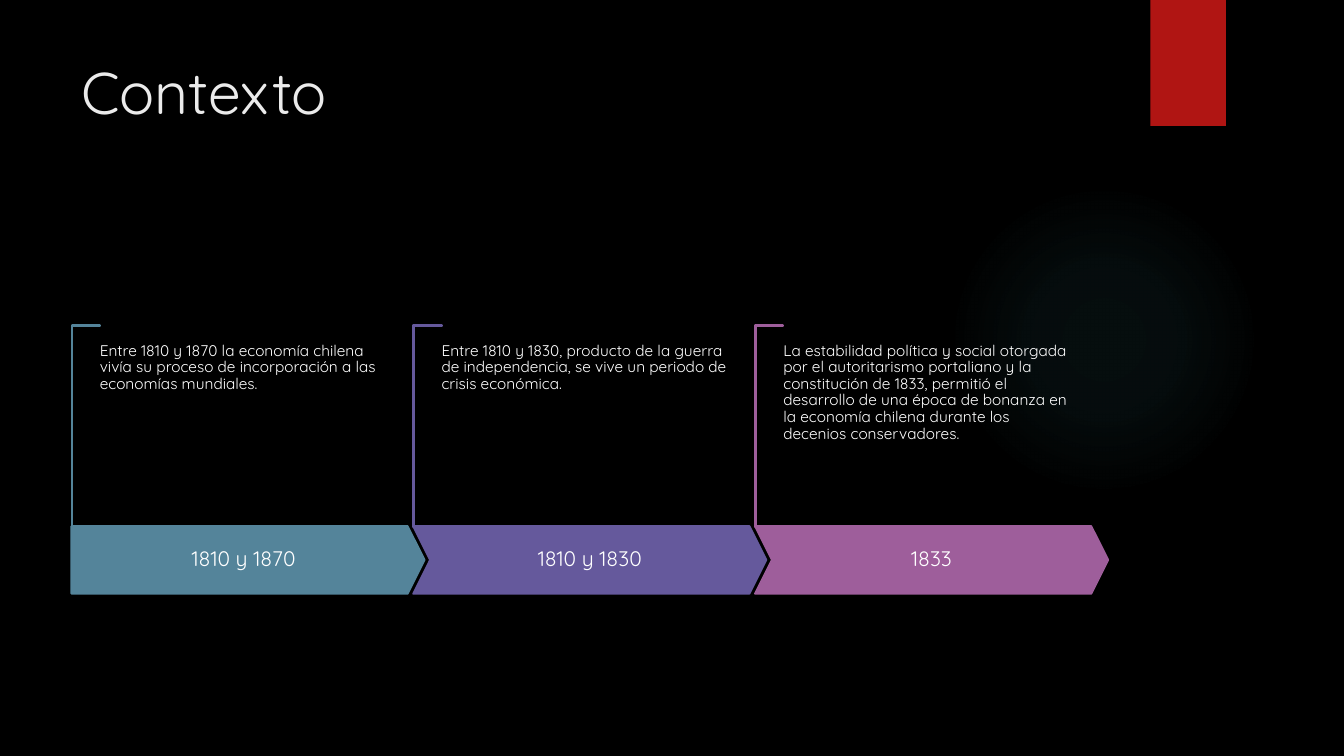
from dataclasses import dataclass

from lxml import etree
from pptx import Presentation
from pptx import util as u
from pptx.dml.color import RGBColor
from pptx.enum import shapes, text
from pptx.oxml import ns

FONT = "Quicksand"
BLACK = RGBColor(0x00, 0x00, 0x00)
WHITE = RGBColor(0xFF, 0xFF, 0xFF)
TITLE_GREY = RGBColor(0xEB, 0xEB, 0xEB)
RED = RGBColor(0xB0, 0x15, 0x13)
TEAL = RGBColor(0x54, 0x84, 0x9A)
VIOLET = RGBColor(0x65, 0x59, 0x9C)
MAUVE = RGBColor(0x9E, 0x5E, 0x9B)
GLOW = RGBColor(0x50, 0xB9, 0xC1)
GLOW_STOPS = ((0, 7), (36, 6), (69, 0))  # position and opacity, percent

# Timeline geometry, in inches
LEFT, PITCH = 0.71, 3.39
ARROW_TOP, ARROW_W, ARROW_H = 5.22, 3.5, 0.67
BRACKET_TOP, BRACKET_LEN, BRACKET_ARM = 3.23, 2, 0.28
NOTCH = 0.17


@dataclass(frozen=True)
class Period:
    label: str
    body: str
    color: RGBColor


PERIODS = (
    Period("1810 y 1870",
           "Entre 1810 y 1870 la economía chilena vivía su proceso de "
           "incorporación a las economías mundiales.", TEAL),
    Period("1810 y 1830",
           "Entre 1810 y 1830, producto de la guerra de independencia, "
           "se vive un periodo de crisis económica.", VIOLET),
    Period("1833",
           "La estabilidad política y social otorgada por el autoritarismo "
           "portaliano y la constitución de 1833, permitió el desarrollo de "
           "una época de bonanza en la economía chilena durante los decenios "
           "conservadores.", MAUVE),
)


def add_shape(s, kind, x: float, y: float, w: float, h: float,
              fill: RGBColor, line: RGBColor | None = None,
              adjustments: tuple[float, ...] = ()):
    sp = s.shapes.add_shape(kind, u.Inches(x), u.Inches(y), u.Inches(w), u.Inches(h))
    sp.shadow.inherit = False
    sp.fill.solid()
    sp.fill.fore_color.rgb = fill
    if line is None:
        sp.line.fill.background()
    else:
        sp.line.color.rgb = line
        sp.line.width = u.Pt(1.5)
    for i, value in enumerate(adjustments):
        sp.adjustments[i] = value
    return sp


def add_text(s, words: str, x: float, y: float, w: float, h: float, size: float,
             color: RGBColor = WHITE, inset: tuple[float, float] = (0, 0),
             centred: bool = False, spacing: float = 0.9) -> None:
    tf = s.shapes.add_textbox(u.Inches(x), u.Inches(y), u.Inches(w), u.Inches(h)).text_frame
    tf.word_wrap = True
    tf.margin_left = tf.margin_right = u.Inches(inset[0])
    tf.margin_top = tf.margin_bottom = u.Inches(inset[1])
    tf.vertical_anchor = text.MSO_ANCHOR.MIDDLE if centred else text.MSO_ANCHOR.TOP
    p = tf.paragraphs[0]
    p.alignment = text.PP_ALIGN.CENTER if centred else text.PP_ALIGN.LEFT
    p.line_spacing = spacing
    r = p.add_run()
    r.text = words
    r.font.name = FONT
    r.font.size = u.Pt(size)
    r.font.color.rgb = color


def add_glow(s) -> None:
    sp = add_shape(s, shapes.MSO_SHAPE.OVAL, 9.41, 1.83, 3.08, 3.08, GLOW)
    # Radial gradient that fades out from the centre
    solid = sp._element.spPr.find(ns.qn("a:solidFill"))
    grad = etree.Element(ns.qn("a:gradFill"), rotWithShape="1")
    stops = etree.SubElement(grad, ns.qn("a:gsLst"))
    for position, opacity in GLOW_STOPS:
        stop = etree.SubElement(stops, ns.qn("a:gs"), pos=str(position * 1000))
        color = etree.SubElement(stop, ns.qn("a:srgbClr"), val=str(GLOW))
        etree.SubElement(color, ns.qn("a:alpha"), val=str(opacity * 1000))
    radial = etree.SubElement(grad, ns.qn("a:path"), path="circle")
    etree.SubElement(radial, ns.qn("a:fillToRect"),
                     {side: "50000" for side in "ltrb"})
    solid.getparent().replace(solid, grad)


def add_period(s, index: int, period: Period) -> None:
    x = LEFT + index * PITCH
    first = index == 0

    # Bracket: a thin corner turned a quarter about its centre
    shift = (BRACKET_LEN - BRACKET_ARM) / 2
    bracket = add_shape(s, shapes.MSO_SHAPE.CORNER, x - shift, BRACKET_TOP + shift,
                        BRACKET_LEN, BRACKET_ARM, WHITE, period.color, (0.01, 0.01))
    bracket.rotation = 90

    # Arrow and its label
    kind = shapes.MSO_SHAPE.PENTAGON if first else shapes.MSO_SHAPE.CHEVRON
    add_shape(s, kind, x, ARROW_TOP, ARROW_W, ARROW_H,
              period.color, period.color, (0.25,))
    label_x = x if first else x + NOTCH
    label_w = ARROW_W - NOTCH / 2 if first else ARROW_W - 2 * NOTCH
    add_text(s, period.label, label_x, ARROW_TOP, label_w, ARROW_H, 15,
             inset=(0.1, 0.21), centred=True)

    # Description
    add_text(s, period.body, x + BRACKET_ARM, 3.4, 2.84, 1.33, 11)


def main() -> None:
    prs = Presentation()
    prs.slide_width, prs.slide_height = u.Inches(13.33), u.Inches(7.5)
    s = prs.slides.add_slide(prs.slide_layouts[6])
    s.background.fill.solid()
    s.background.fill.fore_color.rgb = BLACK

    # Backdrop and title
    add_glow(s)
    add_shape(s, shapes.MSO_SHAPE.RECTANGLE, 11.41, 0, 0.75, 1.25, RED)
    add_text(s, "Contexto", 0.71, 0.5, 10.29, 1.53, 42, TITLE_GREY,
             inset=(0.1, 0.05), spacing=1.0)

    # Timeline
    for index, period in enumerate(PERIODS):
        add_period(s, index, period)

    prs.save("out.pptx")


if __name__ == "__main__":
    main()
